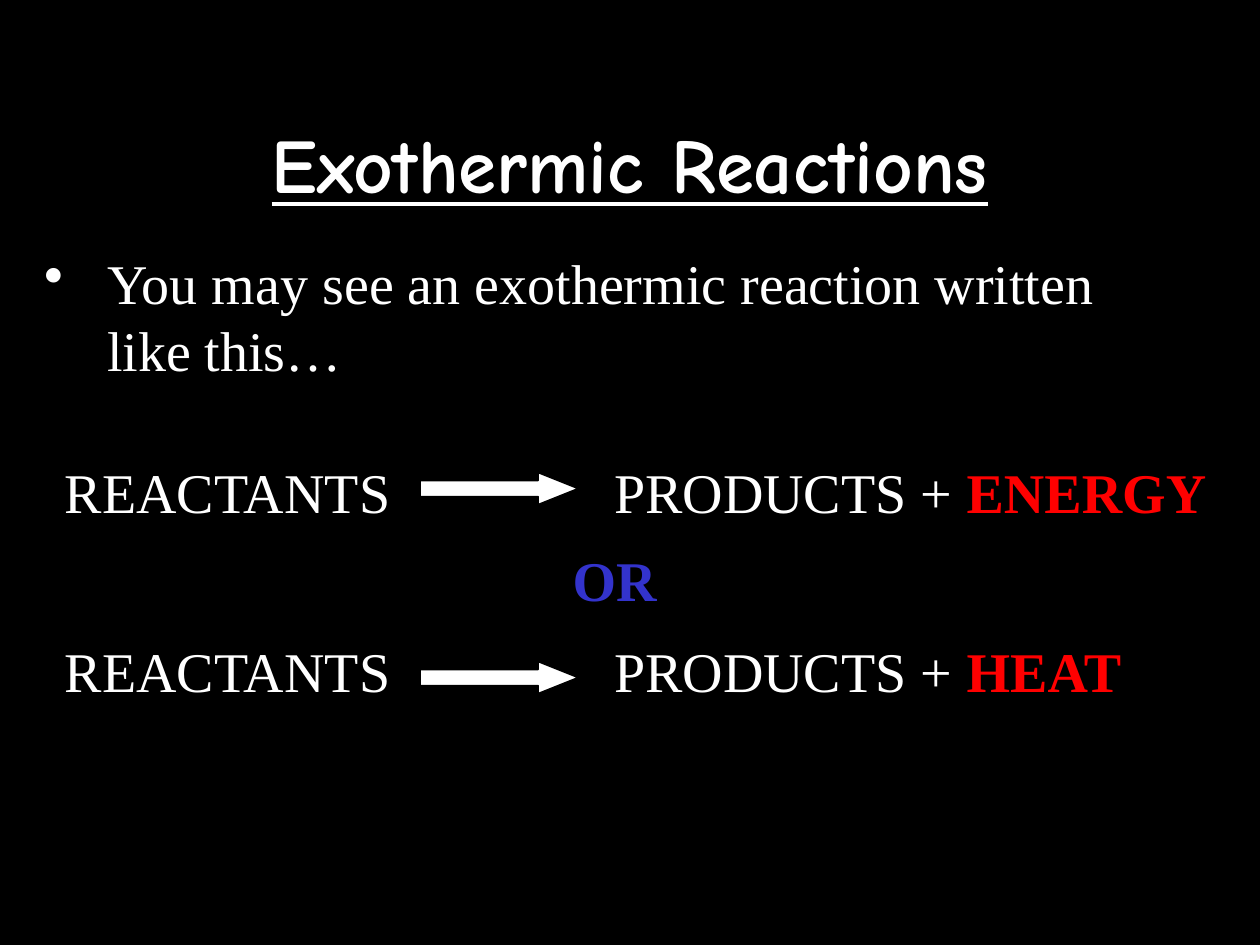
from lxml import etree
from pptx import Presentation
from pptx.dml.color import RGBColor
from pptx.enum.shapes import MSO_SHAPE
from pptx.enum.text import MSO_ANCHOR, PP_ALIGN
from pptx.oxml.ns import qn
from pptx.util import Cm, Pt

ARROW = MSO_SHAPE.RIGHT_ARROW
TOP, MIDDLE = MSO_ANCHOR.TOP, MSO_ANCHOR.MIDDLE
LEFT, CENTER = PP_ALIGN.LEFT, PP_ALIGN.CENTER
BLACK, WHITE, RED, BLUE = "000000", "FFFFFF", "FF0000", "3333CC"


def color(value):
    return RGBColor.from_string(value)


class SlideBuilder:
    """Holds the text style and the slide being built."""

    font = "Times New Roman"
    size = 32

    def __init__(self, deck):
        self.page = deck.slides.add_slide(deck.slide_layouts[6])
        fill = self.page.background.fill
        fill.solid()
        fill.fore_color.rgb = color(BLACK)

    def text(self, left, top, width, height, align=LEFT, anchor=TOP):
        box = self.page.shapes.add_textbox(Cm(left), Cm(top), Cm(width), Cm(height))
        box.text_frame.word_wrap = True
        box.text_frame.vertical_anchor = anchor
        para = box.text_frame.paragraphs[0]
        para.alignment = align
        return para

    def span(self, para, text, tint=WHITE, bold=False, font=None, size=None, underline=False):
        span = para.add_run()
        span.text = text
        span.font.name = font or self.font
        span.font.size = Pt(size or self.size)
        span.font.bold = bold
        span.font.underline = underline
        span.font.color.rgb = color(tint)

    def bullet(self, para, indent):
        properties = para._p.get_or_add_pPr()
        properties.set("marL", str(Cm(indent)))
        properties.set("indent", str(-Cm(indent)))
        etree.SubElement(properties, qn("a:buChar"), char="•")

    def tab(self, para, position):
        stops = etree.SubElement(para._p.get_or_add_pPr(), qn("a:tabLst"))
        etree.SubElement(stops, qn("a:tab"), pos=str(Cm(position)), algn="l")

    def arrow(self, left, top, width, height):
        arrow = self.page.shapes.add_shape(ARROW, Cm(left), Cm(top), Cm(width), Cm(height))
        arrow.shadow.inherit = False
        arrow.adjustments[0] = 0.5
        arrow.adjustments[1] = 1.25
        arrow.fill.solid()
        arrow.fill.fore_color.rgb = color(WHITE)
        arrow.line.color.rgb = color(BLACK)
        arrow.line.width = Pt(0.75)

    def reaction(self, top, arrow_top, release):
        para = self.text(1.06, top, 24.77, 2)
        self.tab(para, 11.07)
        self.span(para, "REACTANTS\tPRODUCTS + ")
        self.span(para, release, RED, bold=True)
        self.arrow(8.47, arrow_top, 3.18, 0.64)


def main():
    deck = Presentation()
    deck.slide_width, deck.slide_height = Cm(25.4), Cm(19.05)
    slide = SlideBuilder(deck)

    title = slide.text(1.9, 1.7, 21.6, 3.18, CENTER, MIDDLE)
    slide.span(title, "Exothermic Reactions", bold=True, font="Comic Neue", size=44, underline=True)

    intro = slide.text(0.64, 4.88, 22.86, 3.6)
    slide.bullet(intro, 1.27)
    slide.span(intro, "You may see an exothermic reaction written like this…")

    slide.reaction(9.1, 9.53, "ENERGY")
    choice = slide.text(10.8, 10.87, 3.18, 1.6, CENTER)
    slide.span(choice, "OR", BLUE, bold=True)
    slide.reaction(12.7, 13.34, "HEAT")

    deck.save("out.pptx")


if __name__ == "__main__":
    main()
